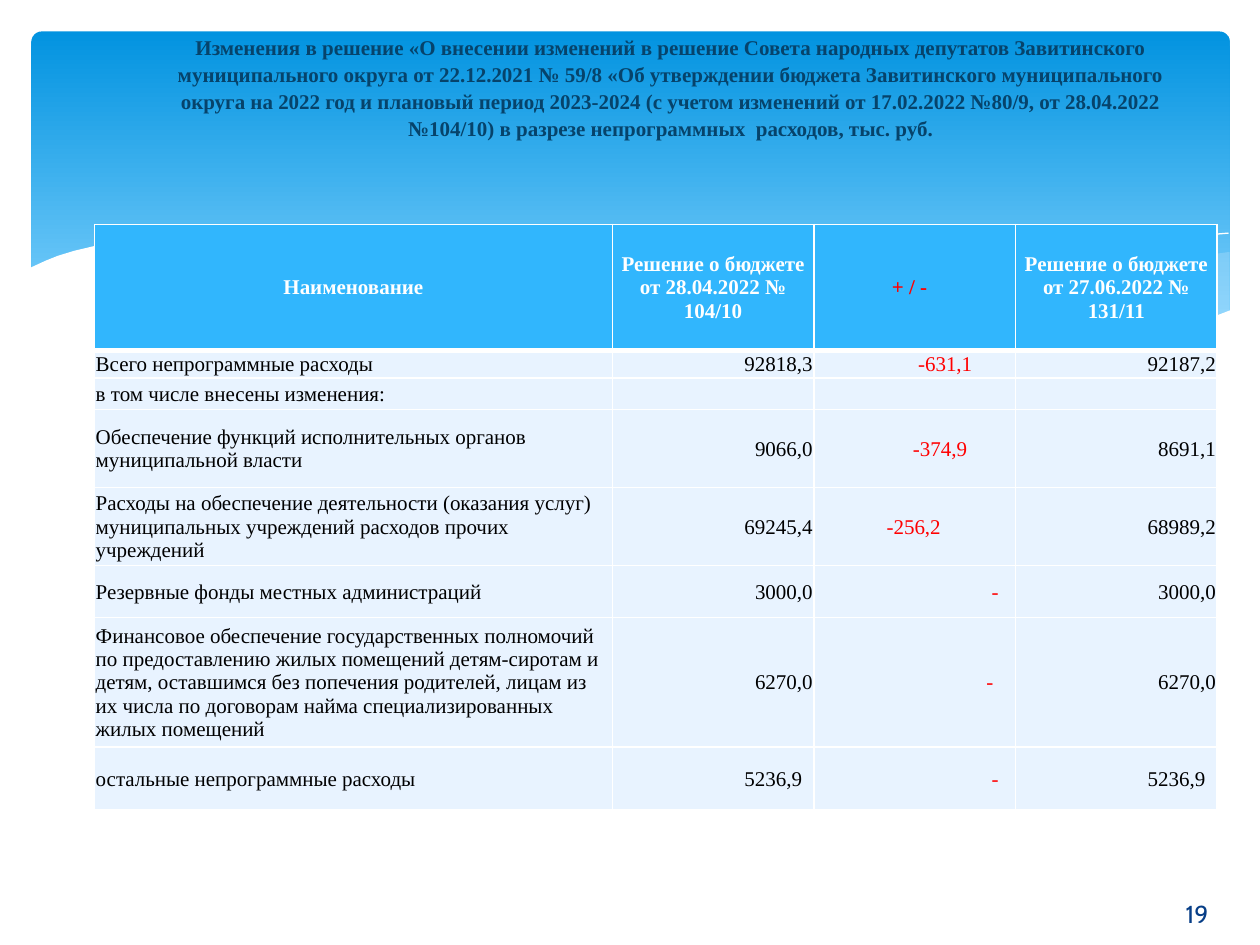
from lxml import etree
from pptx import Presentation, util as u
from pptx.dml.color import RGBColor
from pptx.enum import shapes, text
from pptx.oxml.ns import qn

WIDTH, HEIGHT = 10, 7.5
SERIF = "Times New Roman"
WHITE, BLACK, RED = "FFFFFF", "000000", "FF0000"
HEADER_FILL, BODY_FILL, MIST = "31B6FD", "E8F3FF", "C6E7FC"
LEFT, CENTER, RIGHT = text.PP_ALIGN.LEFT, text.PP_ALIGN.CENTER, text.PP_ALIGN.RIGHT
SPACE = 3 / 72

TITLE = (
    "Изменения в решение «О внесении изменений в решение Совета народных депутатов "
    "Завитинского муниципального округа от 22.12.2021 № 59/8 «Об утверждении бюджета "
    "Завитинского муниципального округа на 2022 год и плановый период 2023-2024 "
    "(с учетом изменений от 17.02.2022 №80/9, от 28.04.2022 №104/10) в разрезе "
    "непрограммных  расходов, тыс. руб."
)
PAGE = "19"
HEADINGS = ["Наименование", "Решение о бюджете от 28.04.2022 № 104/10", "+ / -",
            "Решение о бюджете от 27.06.2022 № 131/11"]
EXPENSES = [
    ("Всего непрограммные расходы", "92818,3", "-631,1", "92187,2"),
    ("в том числе внесены изменения:", "", "", ""),
    ("Обеспечение функций исполнительных органов муниципальной власти",
     "9066,0", "-374,9", "8691,1"),
    ("Расходы на обеспечение деятельности (оказания услуг) муниципальных учреждений "
     "расходов прочих учреждений", "69245,4", "-256,2", "68989,2"),
    ("Резервные фонды местных администраций", "3000,0", "-", "3000,0"),
    ("Финансовое обеспечение государственных полномочий по предоставлению жилых помещений "
     "детям-сиротам и детям, оставшимся без попечения родителей, лицам из их числа по "
     "договорам найма специализированных жилых помещений", "6270,0", "-", "6270,0"),
    ("остальные непрограммные расходы", "5236,9", "-", "5236,9"),
]
COLUMNS = [4.11, 1.6, 1.6, 1.6]
ROWS = [1, 0.22, 0.25, 0.62, 0.62, 0.41, 1.03, 0.5]
INDENTS = {(0, 2): 2, (1, 2): 8, (3, 2): 9, (4, 2): 14, (5, 2): 3, (6, 2): 4,
           (7, 1): 2, (7, 2): 3, (7, 3): 2}

# Wave outlines in hundredths of an inch
RIGHT_WAVE = [
    (975, 200), (948, 204), (921, 210), (891, 216), (861, 223), (805, 237), (753, 248),
    (706, 257), (661, 265), (691, 269), (719, 272), (745, 275), (769, 277), (803, 278),
    (835, 277), (863, 275), (889, 272), (913, 267), (935, 262), (949, 257), (963, 252),
    (976, 247), (976, 200)]
MIDDLE_WAVE = [
    (893, 273), (866, 269), (807, 260), (741, 247), (668, 231), (629, 222), (598, 214),
    (569, 208), (541, 203), (514, 198), (489, 194), (442, 189), (399, 186), (361, 185),
    (328, 187), (299, 189), (286, 191), (323, 196), (362, 203), (404, 211), (449, 222),
    (530, 240), (584, 252), (618, 258), (650, 264), (680, 268), (709, 272), (736, 275),
    (761, 277), (796, 278), (838, 278), (867, 276), (893, 273)]
LONG_LINE = [
    (309, 195), (328, 192), (353, 189), (387, 187), (416, 187), (450, 188), (489, 190),
    (533, 194), (582, 200), (636, 208), (695, 219), (760, 233), (831, 251), (907, 272)]
SHORT_LINE = [
    (613, 257), (653, 246), (695, 235), (748, 223), (806, 210), (866, 199), (895, 194),
    (924, 190), (951, 187), (975, 185)]
WHITE_WAVE = [
    (977, 246), (959, 253), (940, 259), (920, 265), (899, 269), (875, 273), (850, 275),
    (823, 277), (793, 276), (761, 275), (726, 272), (688, 268), (648, 262), (603, 254),
    (555, 245), (503, 233), (447, 220), (391, 207), (340, 197), (292, 190), (250, 186),
    (211, 184), (177, 184), (146, 185), (119, 187), (95, 191), (76, 195), (59, 199),
    (46, 203), (36, 207), (23, 213), (23, 329), (977, 329)]
WAVES = [
    (RIGHT_WAVE, MIST, 29), (MIDDLE_WAVE, MIST, 40), (LONG_LINE, None, 0),
    (SHORT_LINE, None, 0), (WHITE_WAVE, WHITE, 100)]


def colour(value):
    return RGBColor.from_string(value)


def write(frame, words, size=12, font=SERIF, color=BLACK, bold=False, align=LEFT, spacing=None):
    frame.word_wrap = True
    line = frame.paragraphs[0]
    line.alignment = align
    line.line_spacing = spacing
    if not words:
        etree.SubElement(line._p, qn("a:endParaRPr")).set("sz", str(size * 100))
        return
    run = line.add_run()
    run.text = words
    run.font.size, run.font.name, run.font.bold = u.Pt(size), font, bold
    run.font.color.rgb = colour(color)


def draw_banner(slide):
    banner = slide.shapes.add_shape(
        shapes.MSO_SHAPE.ROUNDED_RECTANGLE, *map(u.Inches, (0.25, 0.25, 9.51, 2.7)))
    banner.adjustments[0] = 0.03
    banner.shadow.inherit = False
    banner.line.fill.background()
    banner.fill.gradient()
    banner.fill.gradient_angle = 270
    for stop, place, shade in zip(banner.fill.gradient_stops, (0, 0.9), ("0293E0", "83D3FE")):
        stop.position = place
        stop.color.rgb = colour(shade)


def draw_wave(slide, points, fill, opacity):
    builder = slide.shapes.build_freeform(*points[0], scale=u.Inches(0.01))
    builder.add_line_segments(points[1:], close=bool(fill))
    wave = builder.convert_to_shape()
    wave.shadow.inherit = False
    if fill:
        wave.line.fill.background()
        wave.fill.solid()
        wave.fill.fore_color.rgb = colour(fill)
        shade = wave.fill._xPr.find(".//" + qn("a:srgbClr"))
        etree.SubElement(shade, qn("a:alpha")).set("val", str(opacity * 1000))
    else:
        wave.fill.background()
        wave.line.color.rgb = colour(WHITE)
        wave.line.width = 0


def add_borders(cell, bottom):
    properties = cell._tc.get_or_add_tcPr()
    for place, (side, points) in enumerate([("L", 1), ("R", 1), ("T", 1), ("B", bottom)]):
        border = etree.Element(qn(f"a:ln{side}"), w=str(u.Pt(points)))
        solid = etree.SubElement(border, qn("a:solidFill"))
        etree.SubElement(solid, qn("a:srgbClr")).set("val", WHITE)
        properties.insert(place, border)


def draw_budget(slide):
    budget = slide.shapes.add_table(
        len(ROWS), len(COLUMNS),
        *map(u.Inches, (0.75, 1.78, sum(COLUMNS), sum(ROWS)))).table
    budget.first_row = budget.horz_banding = False
    for column, width in zip(budget.columns, COLUMNS):
        column.width = u.Inches(width)
    for row, height in zip(budget.rows, ROWS):
        row.height = u.Inches(height)
    for r, entries in enumerate([HEADINGS, *EXPENSES]):
        heading = r == 0
        for c, words in enumerate(entries):
            cell = budget.cell(r, c)
            cell.vertical_anchor = text.MSO_ANCHOR.MIDDLE
            cell.margin_left = cell.margin_top = u.Inches(0.01)
            cell.margin_right = u.Inches(0.01 + INDENTS.get((r, c), 0) * SPACE)
            cell.margin_bottom = 0
            cell.fill.solid()
            cell.fill.fore_color.rgb = colour(HEADER_FILL if heading else BODY_FILL)
            add_borders(cell, bottom=3 if heading else 1)
            write(cell.text_frame, words, bold=heading,
                  color=RED if c == 2 else WHITE if heading else BLACK,
                  align=CENTER if heading else RIGHT if c else LEFT)


def main():
    deck = Presentation()
    deck.slide_width, deck.slide_height = u.Inches(WIDTH), u.Inches(HEIGHT)
    slide = deck.slides.add_slide(deck.slide_layouts[6])
    draw_banner(slide)
    for wave in WAVES:
        draw_wave(slide, *wave)
    title = slide.shapes.add_textbox(*map(u.Inches, (1.15, 0.21, 8.35, 0.91)))
    write(title.text_frame, TITLE, color="06436B", bold=True, align=CENTER, spacing=1.07)
    page = slide.shapes.add_textbox(*map(u.Inches, (9.03, 6.89, 0.94, 0.73)))
    page.text_frame.vertical_anchor = text.MSO_ANCHOR.MIDDLE
    write(page.text_frame, PAGE, size=14, font="Cabin", color="073E87", align=CENTER)
    draw_budget(slide)
    deck.save("out.pptx")


if __name__ == "__main__":
    main()
